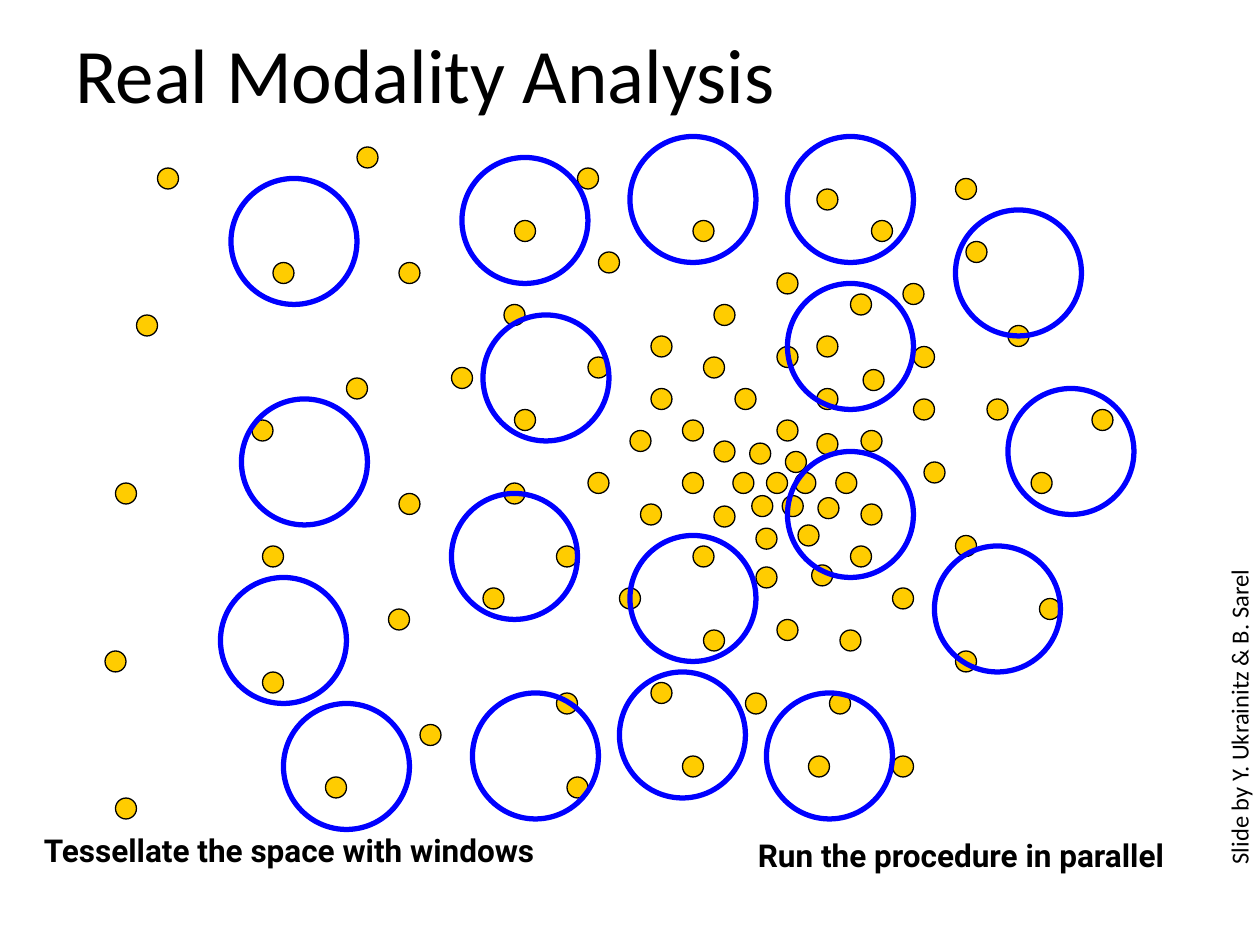
from dataclasses import dataclass
from pptx import Presentation
from pptx.dml.color import RGBColor
from pptx.enum.shapes import MSO_SHAPE
from pptx.enum.text import MSO_ANCHOR, MSO_AUTO_SIZE
from pptx.util import Inches, Pt


@dataclass(frozen=True)
class Theme:
    ink: str = "000000"
    dot: str = "FFCC00"
    window: str = "0000FF"
    body: str = "Calibri"
    accent: str = "Roboto"
    title_size: int = 44
    caption_size: int = 18
    credit_size: int = 14


COLUMNS, ROWS = 120, 90
DOT, WINDOW = 2, 12

DOTS = [
    (73, 45), (75.7, 45), (74.8, 43), (71.4, 42.2), (74.5, 47.2), (71.6, 47.2),
    (77.9, 47.4), (69.8, 45), (79.6, 45), (77.8, 41.3), (74, 40), (76, 50),
    (72, 50.3), (68, 48.2), (65, 45), (68, 42), (82, 48), (81, 52),
    (77.3, 53.8), (72, 54), (66, 52), (61, 48), (60, 41), (65, 40),
    (70, 37), (77.8, 37), (74, 33), (62, 37), (67, 34), (74, 26),
    (68, 29), (77.8, 32), (77.8, 18), (81, 28), (82.2, 35.2), (82, 41),
    (87, 38), (87, 33), (86, 27), (83, 21), (91, 17), (92, 23),
    (96, 31), (88, 44), (94, 38), (104, 39), (91, 51), (98.2, 45),
    (85, 56), (99, 57), (91, 62), (80, 60), (74, 59), (79, 66),
    (85, 72), (77, 72), (71, 66), (67, 60), (59, 56), (62, 65),
    (65, 72), (54, 74), (53, 66), (46, 56), (53, 52), (56, 45),
    (49, 39), (56, 34), (62, 32), (57, 24), (66, 21), (55, 16),
    (49, 21), (48, 29), (43, 35), (48, 46), (38, 47), (37, 58),
    (40, 69), (31, 74), (25, 64), (25, 52), (33, 36), (38, 25),
    (26, 25), (24, 40), (10, 62), (11, 76), (11, 46), (13, 30),
    (15, 16), (34, 14),
]

WINDOWS = [
    (27, 67), (21, 55), (23, 38), (22, 17), (44, 15), (45, 66),
    (59, 64), (73, 66), (89, 52), (96, 37), (91, 20), (75, 13),
    (60, 13), (43, 47), (46, 30), (75, 27), (75, 43), (60, 51),
]


def write(tf, text, *, font, size, color, bold=False, spacing=None):
    p = tf.paragraphs[0]
    p.line_spacing = spacing
    r = p.add_run()
    r.text = text
    r.font.name = font
    r.font.size = Pt(size)
    r.font.bold = bold
    r.font.color.rgb = RGBColor.from_string(color)


class Board:
    def __init__(self, prs, theme):
        self.prs = prs
        self.theme = theme
        self.s = prs.slides.add_slide(prs.slide_layouts[6])

    def box(self, col, row, cols, rows):
        x = self.prs.slide_width / COLUMNS
        y = self.prs.slide_height / ROWS
        return round(col * x), round(row * y), round(cols * x), round(rows * y)

    def circle(self, col, row, size, line, weight, fill=None):
        sp = self.s.shapes.add_shape(MSO_SHAPE.OVAL, *self.box(col, row, size, size))
        sp.shadow.inherit = False
        if fill:
            sp.fill.solid()
            sp.fill.fore_color.rgb = RGBColor.from_string(fill)
        else:
            sp.fill.background()
        sp.line.color.rgb = RGBColor.from_string(line)
        sp.line.width = Pt(weight)

    def dot(self, col, row):
        self.circle(col, row, DOT, self.theme.ink, 0.75, self.theme.dot)

    def window(self, col, row):
        self.circle(col, row, WINDOW, self.theme.window, 3)

    def text(self, area, text, *, wrap=True, grow=True, rotation=0,
             anchor=MSO_ANCHOR.TOP, **style):
        sp = self.s.shapes.add_textbox(*self.box(*area))
        sp.rotation = rotation
        tf = sp.text_frame
        tf.word_wrap = wrap
        tf.auto_size = MSO_AUTO_SIZE.SHAPE_TO_FIT_TEXT if grow else MSO_AUTO_SIZE.NONE
        tf.vertical_anchor = anchor
        write(tf, text, color=self.theme.ink, **style)

    def title(self, area, text):
        self.text(area, text, grow=False, anchor=MSO_ANCHOR.MIDDLE, spacing=0.9,
                  font=self.theme.body, size=self.theme.title_size)

    def caption(self, area, text, wrap):
        self.text(area, text, wrap=wrap, bold=True,
                  font=self.theme.accent, size=self.theme.caption_size)

    def credit(self, area, text):
        self.text(area, text, wrap=False, rotation=270,
                  font=self.theme.body, size=self.theme.credit_size)


def main():
    prs = Presentation()
    prs.slide_width, prs.slide_height = Inches(10), Inches(7.5)
    board = Board(prs, Theme())
    for col, row in DOTS:
        board.dot(col, row)
    for col, row in WINDOWS:
        board.window(col, row)
    board.caption((3, 78.6, 55, 4.8), "Tessellate the space with windows", wrap=True)
    board.caption((71, 79, 43.9, 4.8), "Run the procedure in parallel", wrap=False)
    board.credit((100, 63.4, 36.1, 4.1), "Slide by Y. Ukrainitz & B. Sarel")
    board.title((6, 0, 108, 15), "Real Modality Analysis")
    prs.save("out.pptx")


if __name__ == "__main__":
    main()
